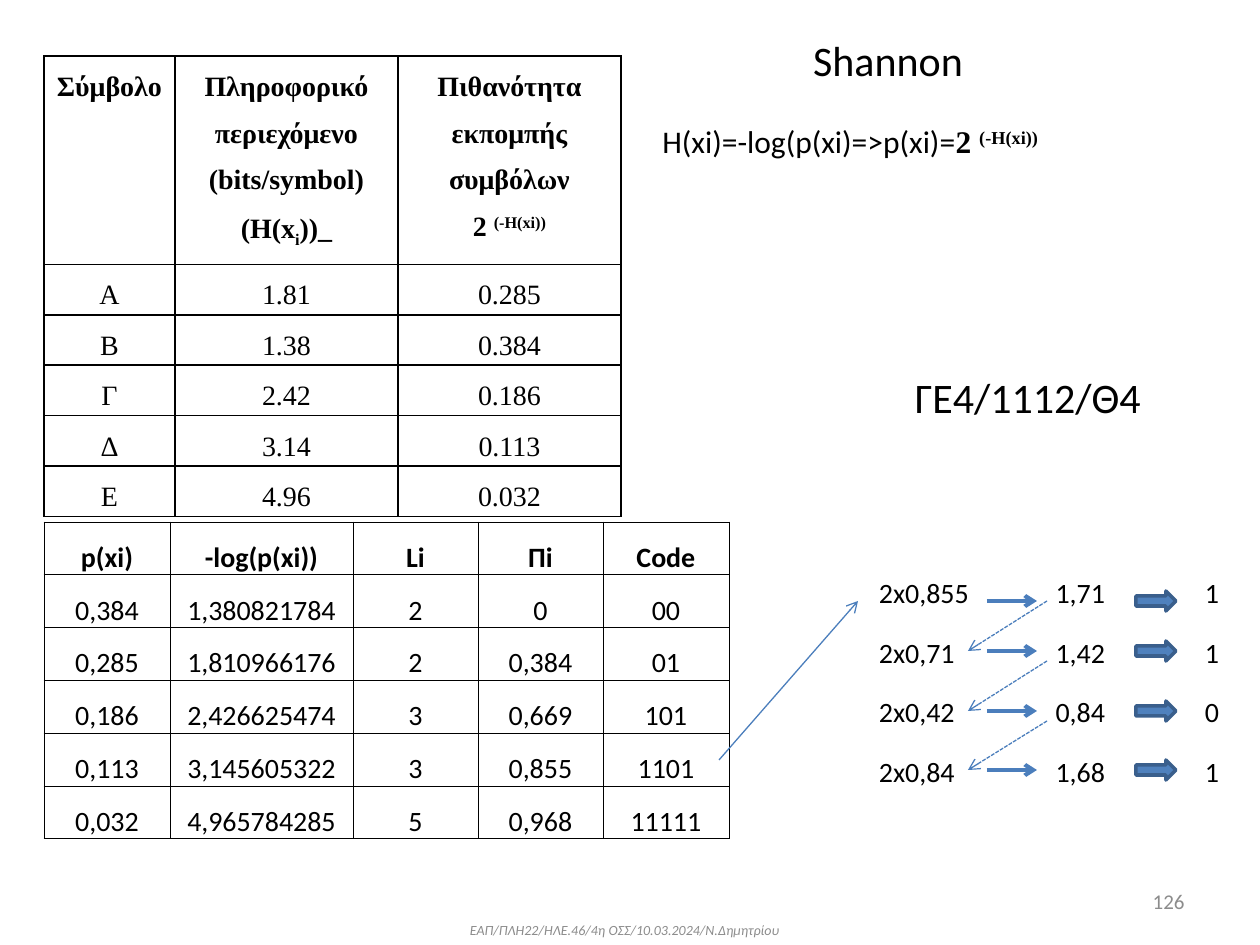
"""Builds the Shannon coding slide with its two tables and binary expansion."""
from lxml import etree
from pptx import Presentation
from pptx.dml.color import RGBColor
from pptx.enum.dml import MSO_LINE
from pptx.enum.shapes import MSO_CONNECTOR, MSO_SHAPE
from pptx.enum.text import MSO_ANCHOR, PP_ALIGN
from pptx.oxml.ns import qn
from pptx.util import Pt

LEFT, CENTER, RIGHT = PP_ALIGN.LEFT, PP_ALIGN.CENTER, PP_ALIGN.RIGHT
TOP, MIDDLE, BOTTOM = MSO_ANCHOR.TOP, MSO_ANCHOR.MIDDLE, MSO_ANCHOR.BOTTOM
DASH = MSO_LINE.SQUARE_DOT
STRAIGHT = MSO_CONNECTOR.STRAIGHT
RIGHT_ARROW = MSO_SHAPE.RIGHT_ARROW

SCALE = 914400 / 126
COLORS = {"text": "000000", "muted": "8C8C8C", "line": "4B7EBC",
          "arrow": "4F81BD", "outline": "3A5F8C"}
SERIF = {"name": "Times New Roman", "size": Pt(16)}
SANS = {"name": "Calibri", "size": Pt(16)}
HEADING = {"name": "Calibri", "size": Pt(24)}
FORMULA = {"name": "Calibri", "size": Pt(18)}
FOOTER = {"name": "Calibri", "size": Pt(8), "italic": True}
NUMBER = {"name": "Calibri", "size": Pt(12)}
SUB, SUPER = {"baseline": "-25000"}, {"baseline": "30000"}
SERIF_BOLD = {"name": "Times New Roman", "bold": True}

SYMBOLS = [
    ["Σύμβολο",
     [["Πληροφορικό περιεχόμενο (bits/symbol) (H(x", ("i", SUB), "))_"]],
     [["Πιθανότητα εκπομπής συμβόλων"], ["2 ", ("(-H(xi))", SUPER)]]],
    ["A", "1.81", "0.285"],
    ["B", "1.38", "0.384"],
    ["Γ", "2.42", "0.186"],
    ["Δ", "3.14", "0.113"],
    ["Ε", "4.96", "0.032"],
]
CODES = [
    ["p(xi)", "-log(p(xi))", "Li", "Πi", "Code"],
    ["0,384", "1,380821784", "2", "0", "00"],
    ["0,285", "1,810966176", "2", "0,384", "01"],
    ["0,186", "2,426625474", "3", "0,669", "101"],
    ["0,113", "3,145605322", "3", "0,855", "1101"],
    ["0,032", "4,965784285", "5", "0,968", "11111"],
]
EXPANSION = [
    ["2x0,855", "1,71", "1"],
    ["2x0,71", "1,42", "1"],
    ["2x0,42", "0,84", "0"],
    ["2x0,84", "1,68", "1"],
]
EQUATION = [["H(xi)=-log(p(xi)=>p(xi)=", ("2 ", SERIF_BOLD),
             ("(-H(xi))", {**SERIF_BOLD, **SUPER})]]
TEXT_BOXES = [
    ("ΕΑΠ/ΠΛΗ22/ΗΛΕ.46/4η ΟΣΣ/10.03.2024/Ν.Δημητρίου",
     (374, 905, 502, 50), CENTER, MIDDLE, FOOTER, "muted", True),
    ("126", (903, 876, 294, 50), RIGHT, MIDDLE, NUMBER, "muted", True),
    (EQUATION, (650, 116, 415, 89), LEFT, TOP, FORMULA, "text", False),
    ("ΓΕ4/1112/Θ4", (888, 363, 280, 68), CENTER, MIDDLE, HEADING, "text", True),
]
ARROW_ROWS = [601, 651, 711, 770]
RETURN_STARTS = [601, 661, 721]


def px(*lengths):
    return [round(length * SCALE) for length in lengths]


def color(name):
    return RGBColor.from_string(COLORS[name])


def write(frame, content, align, formats, color_name="text", spacing=None):
    paragraphs = [[content]] if isinstance(content, str) else content
    for index, runs in enumerate(paragraphs):
        paragraph = frame.add_paragraph() if index else frame.paragraphs[0]
        paragraph.alignment = align
        if spacing:
            paragraph.line_spacing = spacing
        for item in runs:
            text, extra = (item, {}) if isinstance(item, str) else item
            run = paragraph.add_run()
            run.text = text
            run.font.color.rgb = color(color_name)
            for key, value in {**formats, **extra}.items():
                if key == "baseline":
                    run._r.get_or_add_rPr().set(key, value)
                else:
                    setattr(run.font, key, value)


def add_borders(cell, width):
    properties = cell._tc.get_or_add_tcPr()
    for side in ("lnL", "lnR", "lnT", "lnB"):
        line = etree.SubElement(properties, qn(f"a:{side}"), w=str(Pt(width)))
        fill = etree.SubElement(line, qn("a:solidFill"))
        etree.SubElement(fill, qn("a:srgbClr"), val=COLORS["text"])


def add_table(slide, rows, origin, widths, heights, formats, aligns, anchor,
              margins, border=None, bold_header=False, spacing=None):
    size = (sum(widths), sum(heights))
    frame = slide.shapes.add_table(len(rows), len(widths), *px(*origin, *size))
    table = frame.table
    table.first_row = table.horz_banding = False
    for column, width in zip(table.columns, widths):
        column.width = px(width)[0]
    for row, height in zip(table.rows, heights):
        row.height = px(height)[0]
    sides = ("margin_left", "margin_top", "margin_right", "margin_bottom")
    for row_index, values in enumerate(rows):
        style = {**formats, "bold": bold_header and row_index == 0}
        for column_index, value in enumerate(values):
            cell = table.cell(row_index, column_index)
            cell.vertical_anchor = anchor
            for side, margin in zip(sides, px(*margins)):
                setattr(cell, side, margin)
            if border:
                add_borders(cell, border)
            cell.fill.background()
            write(cell.text_frame, value, aligns[column_index], style,
                  spacing=spacing)


def add_arrow_line(slide, start, end, width, dash=None):
    connector = slide.shapes.add_connector(STRAIGHT, *px(*start, *end))
    connector.line.color.rgb = color("line")
    connector.line.width = Pt(width)
    if dash:
        connector.line.dash_style = dash
    etree.SubElement(connector.line._get_or_add_ln(), qn("a:tailEnd"), type="arrow")
    etree.SubElement(connector._element.spPr, qn("a:effectLst"))


def add_block_arrow(slide, middle):
    arrow = slide.shapes.add_shape(RIGHT_ARROW, *px(1136, middle - 10, 40, 20))
    arrow.shadow.inherit = False
    arrow.fill.solid()
    arrow.fill.fore_color.rgb = color("arrow")
    arrow.line.color.rgb = color("outline")
    arrow.line.width = Pt(2)


def main():
    presentation = Presentation()
    presentation.slide_width, presentation.slide_height = px(1260, 945)
    slide = presentation.slides.add_slide(presentation.slide_layouts[5])

    title = slide.shapes.title
    title.left, title.top, title.width, title.height = px(748, 26, 280, 68)
    title.text_frame.vertical_anchor = MIDDLE
    write(title.text_frame, "Shannon", CENTER, HEADING)

    for content, place, align, anchor, formats, color_name, wrap in TEXT_BOXES:
        frame = slide.shapes.add_textbox(*px(*place)).text_frame
        frame.word_wrap = wrap
        frame.vertical_anchor = anchor
        write(frame, content, align, formats, color_name)

    add_table(slide, SYMBOLS, (44, 56), [131, 223, 223], [193] + [46] * 5,
              SERIF, [CENTER] * 3, TOP, (9, 0, 9, 0), 1, True, 1.5)
    add_table(slide, CODES, (44, 522), [126, 183, 125, 125, 126], [52.8] * 6,
              SANS, [CENTER] * 5, BOTTOM, (1, 1, 1, 0), 0.5, True)
    add_table(slide, EXPANSION, (878, 552), [114] * 3, [59.5] * 4,
              SANS, [LEFT, RIGHT, RIGHT], BOTTOM, (1, 1, 1, 0))

    add_arrow_line(slide, (719, 760), (858, 601), 0.75)
    for middle in ARROW_ROWS:
        add_arrow_line(slide, (987, middle), (1037, middle), 2.25)
        add_block_arrow(slide, middle)
    for start, end in zip(RETURN_STARTS, ARROW_ROWS[1:]):
        add_arrow_line(slide, (1047, start), (968, end), 0.75, DASH)

    presentation.save("out.pptx")


if __name__ == "__main__":
    main()
